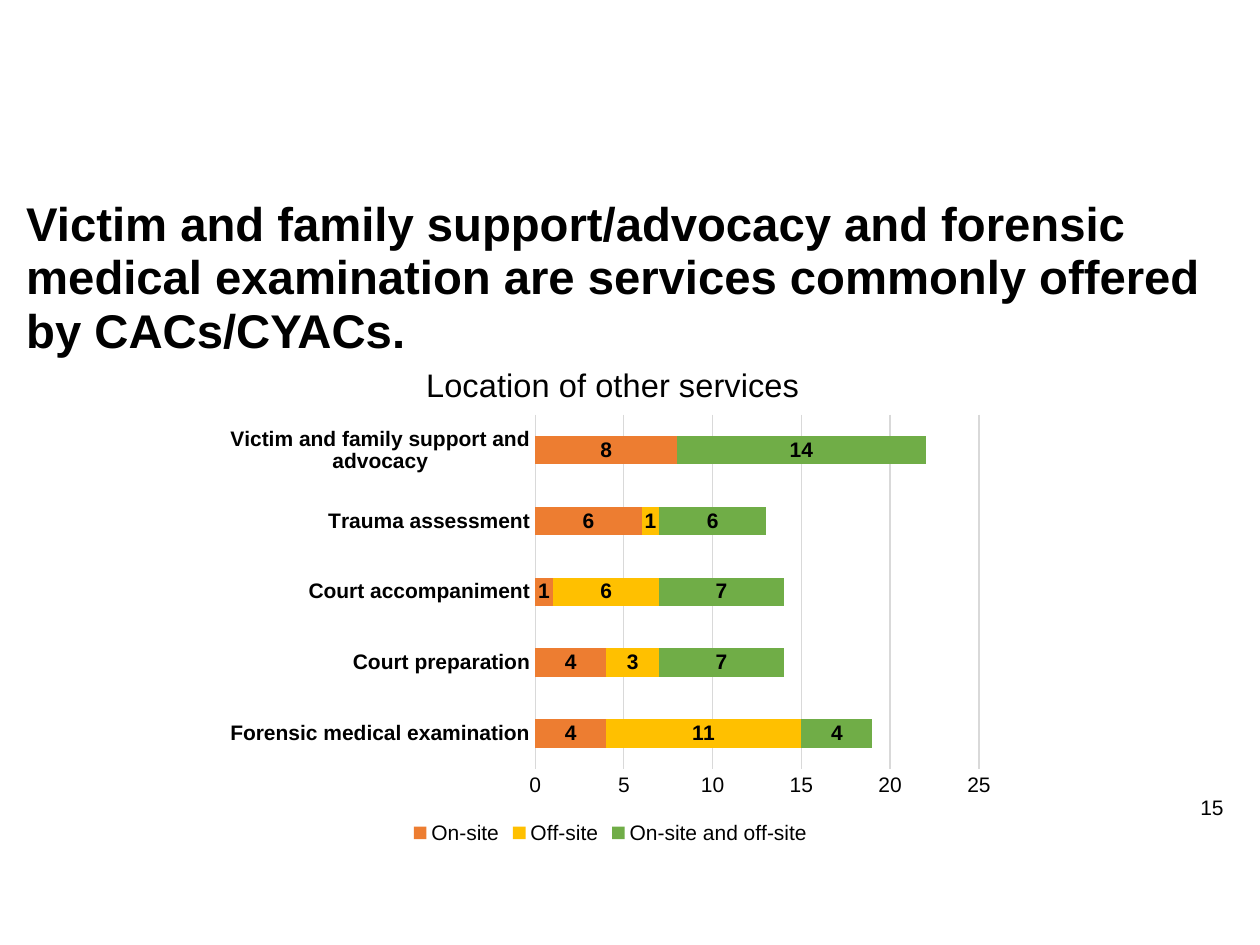
from pptx import Presentation
from pptx.chart.data import CategoryChartData
from pptx.dml.color import RGBColor
from pptx.enum.chart import XL_CHART_TYPE as ChartType, XL_LABEL_POSITION as LabelPosition
from pptx.enum.chart import XL_LEGEND_POSITION as LegendPosition, XL_TICK_MARK as TickMark
from pptx.enum.text import MSO_ANCHOR as Anchor, PP_ALIGN as Align
from pptx.oxml import parse_xml
from pptx.oxml.ns import nsdecls, qn
from pptx.util import Inches, Pt

COLORS = {"text": "000000", "grid": "D9D9D9", "On-site": "ED7D31",
          "Off-site": "FFC000", "On-site and off-site": "70AD47"}
TITLE = ("Victim and family support/advocacy and forensic medical examination "
         "are services commonly offered by CACs/CYACs.")
SLIDE_NUMBER = "15"
CHART_TITLE = "Location of other services"
SERVICES = ["Forensic medical examination", "Court preparation", "Court accompaniment",
            "Trauma assessment", "Victim and family support and advocacy"]
LOCATIONS = {"On-site": [4, 4, 1, 6, 8], "Off-site": [11, 3, 6, 1, None],
             "On-site and off-site": [4, 7, 7, 6, 14]}
TEXTS = [
    (TITLE, (0.11, 1.53, 9.69, 0.6), 27, True, {"line_spacing": 0.94, "alignment": Align.LEFT}),
    (SLIDE_NUMBER, (9.41, 6.26, 0.4, 0.49), 12, False, {"alignment": Align.RIGHT}),
]
CHART_BOX = (1.7, 2.63, 6.29, 4.11)
TITLE_LAYOUT = {"x": 0.26, "y": 0.05}
PLOT_LAYOUT = {"x": 0.405, "y": 0.161, "w": 0.56, "h": 0.684}


def color(name):
    return RGBColor.from_string(COLORS[name])


def set_values(target, values):
    for name, value in values.items():
        setattr(target, name, value)


def set_font(font, size, bold=False):
    set_values(font, {"name": "Arial", "size": Pt(size), "bold": bold})
    font.color.rgb = color("text")


def set_line(line):
    line.color.rgb = color("grid")
    line.width = Pt(0.75)


def add_text(slide, text, box, size, bold, layout):
    shape = slide.shapes.add_textbox(*map(Inches, box))
    set_values(shape.text_frame, {"word_wrap": True, "vertical_anchor": Anchor.TOP})
    paragraph = shape.text_frame.paragraphs[0]
    set_values(paragraph, layout)
    run = paragraph.add_run()
    run.text = text
    set_font(run.font, size, bold)


def make_layout(values, inner=False):
    target = '<c:layoutTarget val="inner"/>' if inner else ""
    modes = "".join(f'<c:{key}Mode val="edge"/>' for key in "xy")
    places = "".join(f'<c:{key} val="{value}"/>' for key, value in values.items())
    return parse_xml(f'<c:layout {nsdecls("c")}><c:manualLayout>{target}{modes}{places}'
                     "</c:manualLayout></c:layout>")


def place(element, layout, index):
    for old in element.findall(qn("c:layout")):
        element.remove(old)
    element.insert(index, layout)


def add_services_chart(slide):
    data = CategoryChartData()
    data.categories = SERVICES
    for name, values in LOCATIONS.items():
        data.add_series(name, values)
    frame = slide.shapes.add_chart(ChartType.BAR_STACKED, *map(Inches, CHART_BOX), data)
    chart = frame.chart
    set_font(chart.font, 10)

    chart.has_title = True
    title_run = chart.chart_title.text_frame.paragraphs[0].add_run()
    title_run.text = CHART_TITLE
    set_font(title_run.font, 18.6)
    chart.chart_title.include_in_layout = False
    place(chart.element.xpath("c:chart/c:title")[0], make_layout(TITLE_LAYOUT), 1)
    place(chart.element.xpath("c:chart/c:plotArea")[0], make_layout(PLOT_LAYOUT, True), 0)

    chart.has_legend = True
    set_values(chart.legend, {"position": LegendPosition.BOTTOM, "include_in_layout": False})
    set_font(chart.legend.font, 12)

    for axis, bold in ((chart.category_axis, True), (chart.value_axis, False)):
        set_values(axis, {"major_tick_mark": TickMark.NONE, "minor_tick_mark": TickMark.NONE})
        set_font(axis.tick_labels.font, 12, bold)
    set_line(chart.category_axis.format.line)
    set_values(chart.value_axis, {"minimum_scale": 0, "maximum_scale": 25, "major_unit": 5,
                                  "has_major_gridlines": True})
    chart.value_axis.format.line.fill.background()
    set_line(chart.value_axis.major_gridlines.format.line)

    plot = chart.plots[0]
    set_values(plot, {"gap_width": 150, "overlap": 100, "vary_by_categories": False})
    for series in plot.series:
        series.format.fill.solid()
        series.format.fill.fore_color.rgb = color(series.name)
        set_values(series.data_labels, {"show_value": True, "position": LabelPosition.CENTER})
        set_font(series.data_labels.font, 12, True)


def main():
    presentation = Presentation()
    set_values(presentation, {"slide_width": Inches(10), "slide_height": Inches(7.5)})
    slide = presentation.slides.add_slide(presentation.slide_layouts[6])
    for text in TEXTS:
        add_text(slide, *text)
    add_services_chart(slide)
    presentation.save("out.pptx")


if __name__ == "__main__":
    main()
